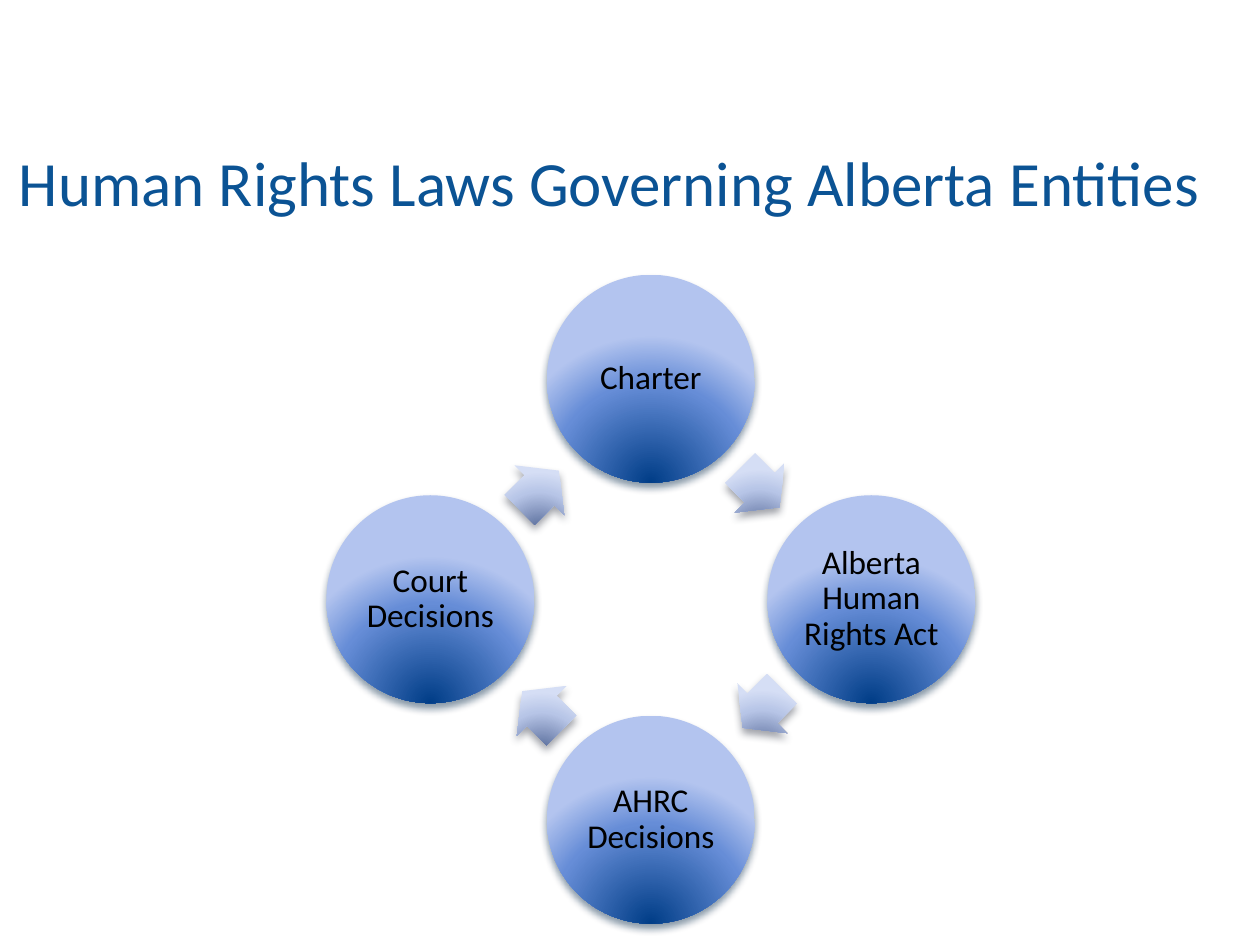
import math

import pptx
import pptx.dml.color
import pptx.enum.shapes
import pptx.enum.text
import pptx.oxml
import pptx.oxml.ns
import pptx.util
from pptx.util import Pt

COLORS = {
    "title": "0B5394",
    "label": "000000",
    "circle": ["003D87", "668DD7", "B3C4EF"],
    "circle_shadow": "042747",
    "arrow": ["4A5F8F", "B7C5E7", "D5DEF5"],
    "arrow_shadow": "3C414F",
}
FONT = "Calibri"
STEPS = ["Charter", "Alberta Human Rights Act", "AHRC Decisions", "Court Decisions"]
CIRCLE_SIZE = 118.8
ARROW_LENGTH, ARROW_WIDTH = 31.7, 40.3
ARROW_RADIUS, ARROW_START = 89.1, -45.65


def add_glow(shape, stops, shadow_color):
    namespace = pptx.oxml.ns.nsdecls("a")
    stop_xml = "".join(
        f'<a:gs pos="{position}"><a:srgbClr val="{color}"/></a:gs>'
        for position, color in zip((0, 68000, 100000), stops)
    )
    gradient = pptx.oxml.parse_xml(
        f'<a:gradFill {namespace} rotWithShape="1"><a:gsLst>{stop_xml}</a:gsLst>'
        '<a:path path="circle"><a:fillToRect l="50000" t="130000" r="50000" b="-30000"/>'
        "</a:path></a:gradFill>"
    )
    shadow = pptx.oxml.parse_xml(
        f'<a:outerShdw {namespace} blurRad="{Pt(4.5)}" dist="{Pt(3)}" dir="5400000" '
        f'rotWithShape="0"><a:srgbClr val="{shadow_color}"><a:alpha val="48000"/>'
        "</a:srgbClr></a:outerShdw>"
    )
    shape.line.fill.background()
    shape.shadow.inherit = False
    properties = shape.element.spPr
    properties.find(pptx.oxml.ns.qn("a:prstGeom")).addnext(gradient)
    properties.find(pptx.oxml.ns.qn("a:effectLst")).append(shadow)


def write_text(shape, text, size, color, anchor, alignment, insets):
    frame = shape.text_frame
    frame.word_wrap = True
    frame.vertical_anchor = anchor
    frame.margin_left = frame.margin_right = Pt(insets[0])
    frame.margin_top, frame.margin_bottom = Pt(insets[1]), Pt(insets[2])
    paragraph = frame.paragraphs[0]
    paragraph.alignment = alignment
    run = paragraph.add_run()
    run.text = text
    run.font.name = FONT
    run.font.size = Pt(size)
    run.font.color.rgb = pptx.dml.color.RGBColor.from_string(color)
    return paragraph


def add_centered(group, kind, center_x, center_y, width, height):
    return group.shapes.add_shape(
        kind, Pt(center_x - width / 2), Pt(center_y - height / 2), Pt(width), Pt(height)
    )


def add_title(slide, left, top, width, height):
    box = slide.shapes.add_textbox(Pt(left), Pt(top), Pt(width), Pt(height))
    write_text(
        box, "Human Rights Laws Governing Alberta Entities", 36, COLORS["title"],
        pptx.enum.text.MSO_ANCHOR.BOTTOM, pptx.enum.text.PP_ALIGN.LEFT, (0, 3.6, 0),
    )


def add_cycle(slide, left, top, size):
    group = slide.shapes.add_group_shape()
    center_x, center_y = left + size / 2, top + size / 2
    circle_radius = (size - CIRCLE_SIZE) / 2
    for index, label in enumerate(STEPS):
        turn = 90 * index
        angle = math.radians(turn - 90)
        circle = add_centered(
            group, pptx.enum.shapes.MSO_SHAPE.OVAL,
            center_x + circle_radius * math.cos(angle),
            center_y + circle_radius * math.sin(angle),
            CIRCLE_SIZE, CIRCLE_SIZE,
        )
        add_glow(circle, COLORS["circle"], COLORS["circle_shadow"])
        paragraph = write_text(
            circle, label, 19, COLORS["label"],
            pptx.enum.text.MSO_ANCHOR.MIDDLE, pptx.enum.text.PP_ALIGN.CENTER, (2, 2, 2),
        )
        paragraph.line_spacing = 0.9

        angle = math.radians(turn + ARROW_START)
        arrow = add_centered(
            group, pptx.enum.shapes.MSO_SHAPE.RIGHT_ARROW,
            center_x + ARROW_RADIUS * math.cos(angle),
            center_y + ARROW_RADIUS * math.sin(angle),
            ARROW_LENGTH, ARROW_WIDTH,
        )
        arrow.adjustments[0] = 0.6
        arrow.adjustments[1] = 0.5
        arrow.rotation = turn + 45
        add_glow(arrow, COLORS["arrow"], COLORS["arrow_shadow"])


def main():
    presentation = pptx.Presentation()
    presentation.slide_width, presentation.slide_height = Pt(720), Pt(540)
    slide = presentation.slides.add_slide(presentation.slide_layouts[6])
    add_title(slide, 10.8, 65.5, 690.5, 59.8)
    add_cycle(slide, 186.5, 157, 370.8)
    presentation.save("out.pptx")


if __name__ == "__main__":
    main()
